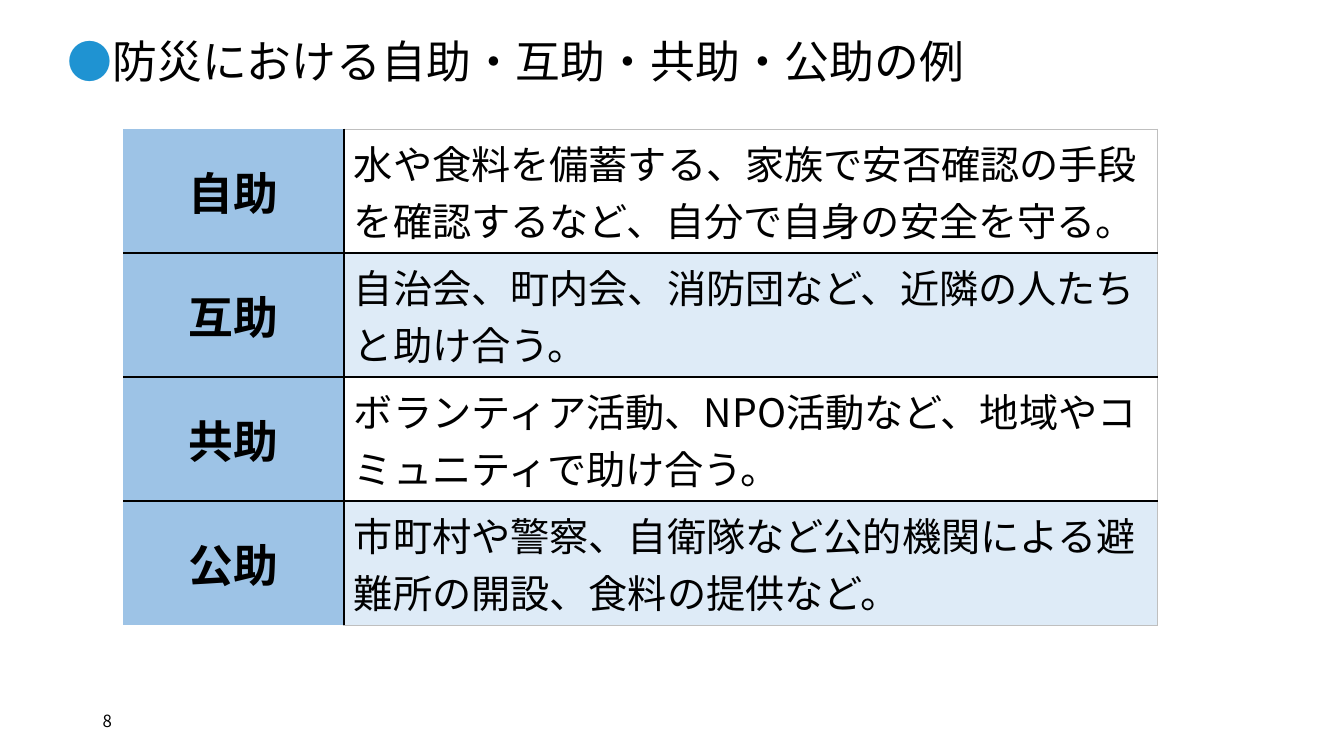
from lxml.etree import SubElement
from pptx import Presentation
from pptx.dml.color import RGBColor
from pptx.enum.lang import MSO_LANGUAGE_ID
from pptx.enum.text import MSO_ANCHOR, MSO_AUTO_SIZE, PP_ALIGN
from pptx.oxml.ns import qn
from pptx.util import Inches, Pt

FONT = "Noto Sans CJK JP"
BLACK = RGBColor(0x00, 0x00, 0x00)
GREY = RGBColor(0xBF, 0xBF, 0xBF)
WHITE = RGBColor(0xFF, 0xFF, 0xFF)
BULLET_BLUE = RGBColor(0x1F, 0x93, 0xD2)
LABEL_BLUE = RGBColor(0x9D, 0xC3, 0xE6)
BAND_BLUE = RGBColor(0xDE, 0xEB, 0xF7)

COLUMN_WIDTHS = (2.19, 8.07)
ROW_HEIGHT = 1.23
TITLE = "防災における自助・互助・共助・公助の例"
SUPPORT_TYPES = (
    ("自助", "水や食料を備蓄する、家族で安否確認の手段を確認するなど、自分で自身の安全を守る。"),
    ("互助", "自治会、町内会、消防団など、近隣の人たちと助け合う。"),
    ("共助", "ボランティア活動、NPO活動など、地域やコミュニティで助け合う。"),
    ("公助", "市町村や警察、自衛隊など公的機関による避難所の開設、食料の提供など。"),
)


def format_run(run, size, color=BLACK, bold=False):
    """Set the size, colour, weight and Japanese typeface of a run."""
    font = run.font
    font.size, font.bold, font.name = Pt(size), bold, FONT
    font.color.rgb = color
    font.language_id = MSO_LANGUAGE_ID.JAPANESE
    SubElement(font._element, qn("a:ea"), typeface=FONT)


def set_border(cell, side, color, width):
    """Draw one side of a cell, or leave it open when the colour is None."""
    properties = cell._tc.get_or_add_tcPr()
    line = properties.makeelement(qn(f"a:{side}"), {"w": str(Pt(width))})
    if color is None:
        SubElement(line, qn("a:noFill"))
    else:
        fill = SubElement(line, qn("a:solidFill"))
        SubElement(fill, qn("a:srgbClr"), val=str(color))
    properties.append(line)


def fill_cell(cell, text, size, background, alignment, bold=False):
    """Write vertically centred text on a coloured cell."""
    cell.text_frame.text = text
    cell.vertical_anchor = MSO_ANCHOR.MIDDLE
    paragraph = cell.text_frame.paragraphs[0]
    paragraph.alignment = alignment
    format_run(paragraph.runs[0], size, bold=bold)
    return background


def finish_cell(cell, borders, background):
    """Add the four borders, then the fill that follows them."""
    for side, (color, width) in borders.items():
        set_border(cell, side, color, width)
    cell.fill.solid()
    cell.fill.fore_color.rgb = background


def add_title(slide):
    """Place the title with its coloured round mark."""
    title = slide.shapes.title
    title.left, title.top = Inches(0.57), Inches(0.28)
    title.width, title.height = Inches(11.56), Inches(0.64)
    frame = title.text_frame
    frame.auto_size = MSO_AUTO_SIZE.NONE
    frame.vertical_anchor = MSO_ANCHOR.MIDDLE
    paragraph = frame.paragraphs[0]
    paragraph.alignment = PP_ALIGN.LEFT
    for text, color in (("●", BULLET_BLUE), (TITLE, BLACK)):
        run = paragraph.add_run()
        run.text = text
        format_run(run, 32, color)


def add_support_table(slide):
    """Add the table of support types with their examples."""
    row_count = len(SUPPORT_TYPES)
    table = slide.shapes.add_table(
        row_count, len(COLUMN_WIDTHS), Inches(1.22), Inches(1.28),
        Inches(sum(COLUMN_WIDTHS)), Inches(ROW_HEIGHT * row_count)).table
    table.first_row = table.horz_banding = False
    for column, width in zip(table.columns, COLUMN_WIDTHS):
        column.width = Inches(width)
    outer, inner, divider = (GREY, 0.5), (BLACK, 1), (BLACK, 1.5)
    for index, (label, example) in enumerate(SUPPORT_TYPES):
        table.rows[index].height = Inches(ROW_HEIGHT)
        top = inner if index else outer
        bottom = inner if index < row_count - 1 else outer
        label_cell, example_cell = table.cell(index, 0), table.cell(index, 1)
        fill_cell(label_cell, label, 32, LABEL_BLUE, PP_ALIGN.CENTER, True)
        fill_cell(example_cell, example, 28, WHITE, PP_ALIGN.LEFT)
        finish_cell(label_cell, {"lnL": (None, 1), "lnR": divider,
                                 "lnT": top if index else (None, 1),
                                 "lnB": bottom if bottom is inner else (None, 1)},
                    LABEL_BLUE)
        finish_cell(example_cell, {"lnL": divider, "lnR": outer,
                                   "lnT": top, "lnB": bottom},
                    BAND_BLUE if index % 2 else WHITE)


def add_page_number(slide, number):
    """Write the page number at the lower left."""
    box = slide.shapes.add_textbox(Inches(0.92), Inches(6.95), Inches(3), Inches(0.4))
    frame = box.text_frame
    frame.word_wrap = True
    frame.vertical_anchor = MSO_ANCHOR.MIDDLE
    frame.text = str(number)
    format_run(frame.paragraphs[0].runs[0], 12)


def main():
    """Build the slide and save the presentation."""
    presentation = Presentation()
    presentation.slide_width, presentation.slide_height = Inches(13.33), Inches(7.5)
    slide = presentation.slides.add_slide(presentation.slide_layouts[5])
    add_page_number(slide, 8)
    add_title(slide)
    add_support_table(slide)
    presentation.save("out.pptx")


if __name__ == "__main__":
    main()
